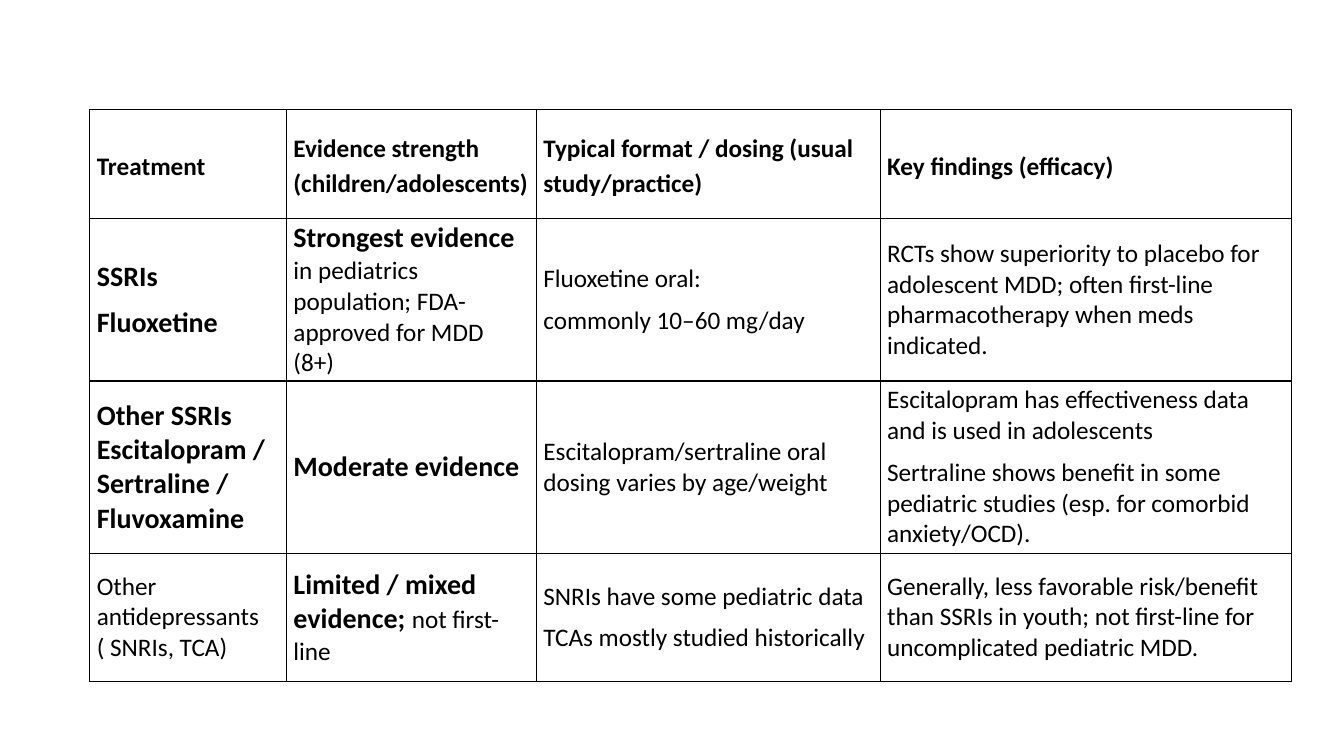
import pptx
import pptx.util
import pptx.dml.color
import pptx.enum.text
import pptx.oxml
import pptx.oxml.ns

SLIDE_WIDTH, SLIDE_HEIGHT = 13.33, 7.5
TABLE_LEFT, TABLE_TOP = 6.68, 14.53
COLUMN_SHARES = [14.63, 18.6, 25.58, 30.61]
ROW_SHARES = [14.4, 21.47, 22.8, 16.93]
BLACK, WHITE = "000000", "FFFFFF"


def across(percent):
    return pptx.util.Inches(SLIDE_WIDTH * percent / 100)


def down(percent):
    return pptx.util.Inches(SLIDE_HEIGHT * percent / 100)


def color(value):
    return pptx.dml.color.RGBColor.from_string(value)


def add_text(paragraph, text, size=18, bold=False, font_color=BLACK, font="Calibri"):
    run = paragraph.add_run()
    run.text = text
    run.font.name = font
    run.font.size = pptx.util.Pt(size)
    run.font.bold = bold
    run.font.color.rgb = color(font_color)


def plain(text):
    return text, {}


def heading(text):
    return text, {"bold": True}


def strong(text):
    return text, {"size": 20, "bold": True}


def add_borders(cell, line_color=BLACK, width=1):
    properties = cell._tc.get_or_add_tcPr()
    namespace = pptx.oxml.ns.nsdecls("a")
    for position, side in enumerate(("lnL", "lnR", "lnT", "lnB")):
        border = pptx.oxml.parse_xml(
            f'<a:{side} {namespace} w="{pptx.util.Pt(width)}"><a:solidFill>'
            f'<a:srgbClr val="{line_color}"/></a:solidFill></a:{side}>'
        )
        properties.insert(position, border)


def fill_cell(cell, paragraphs, line_spacing):
    cell.fill.solid()
    cell.fill.fore_color.rgb = color(WHITE)
    add_borders(cell)
    cell.vertical_anchor = pptx.enum.text.MSO_ANCHOR.MIDDLE
    cell.margin_left = cell.margin_right = pptx.util.Inches(0.07)
    cell.margin_top = cell.margin_bottom = 0
    frame = cell.text_frame
    for index, runs in enumerate(paragraphs):
        paragraph = frame.add_paragraph() if index else frame.paragraphs[0]
        paragraph.space_after = pptx.util.Pt(8)
        paragraph.line_spacing = line_spacing
        for text, text_format in runs:
            add_text(paragraph, text, **text_format)


def add_treatment_table(slide, rows):
    shape = slide.shapes.add_table(
        len(ROW_SHARES), len(COLUMN_SHARES), across(TABLE_LEFT), down(TABLE_TOP),
        across(sum(COLUMN_SHARES)), down(sum(ROW_SHARES)),
    )
    table = shape.table
    table.first_row = table.horz_banding = False
    for column, share in zip(table.columns, COLUMN_SHARES):
        column.width = across(share)
    for row, share in zip(table.rows, ROW_SHARES):
        row.height = down(share)
    for row_index, contents in enumerate(rows):
        for column_index, paragraphs in enumerate(contents):
            line_spacing = 1.0 if row_index else 1.15
            fill_cell(table.cell(row_index, column_index), paragraphs, line_spacing)


def main():
    presentation = pptx.Presentation()
    presentation.slide_width = across(100)
    presentation.slide_height = down(100)
    slide = presentation.slides.add_slide(presentation.slide_layouts[6])
    titles = [
        "Treatment",
        "Evidence strength (children/adolescents)",
        "Typical format / dosing (usual study/practice)",
        "Key findings (efficacy)",
    ]
    rows = [
        [[[heading(title)]] for title in titles],
        [
            [[strong("SSRIs")], [strong("Fluoxetine")]],
            [[strong("Strongest evidence "),
              plain("in pediatrics population; FDA-approved for MDD (8+)")]],
            [[plain("Fluoxetine oral:")], [plain("commonly 10–60 mg/day")]],
            [[plain("RCTs show superiority to placebo for adolescent MDD; often "
                    "first-line pharmacotherapy when meds indicated.")]],
        ],
        [
            [[strong("Other SSRIs Escitalopram / Sertraline / Fluvoxamine")]],
            [[strong("Moderate evidence")]],
            [[plain("Escitalopram/sertraline oral dosing varies by age/weight")]],
            [[plain("Escitalopram has effectiveness data and is used in adolescents")],
             [plain("Sertraline shows benefit in some pediatric studies "
                    "(esp. for comorbid anxiety/OCD).")]],
        ],
        [
            [[plain("Other antidepressants ( SNRIs, TCA)")]],
            [[strong("Limited / mixed evidence; "), plain("not first-line")]],
            [[plain("SNRIs have some pediatric data")],
             [plain("TCAs mostly studied historically")]],
            [[plain("Generally, less favorable risk/benefit than SSRIs in youth; "
                    "not first-line for uncomplicated pediatric MDD.")]],
        ],
    ]
    add_treatment_table(slide, rows)
    presentation.save("out.pptx")


if __name__ == "__main__":
    main()
